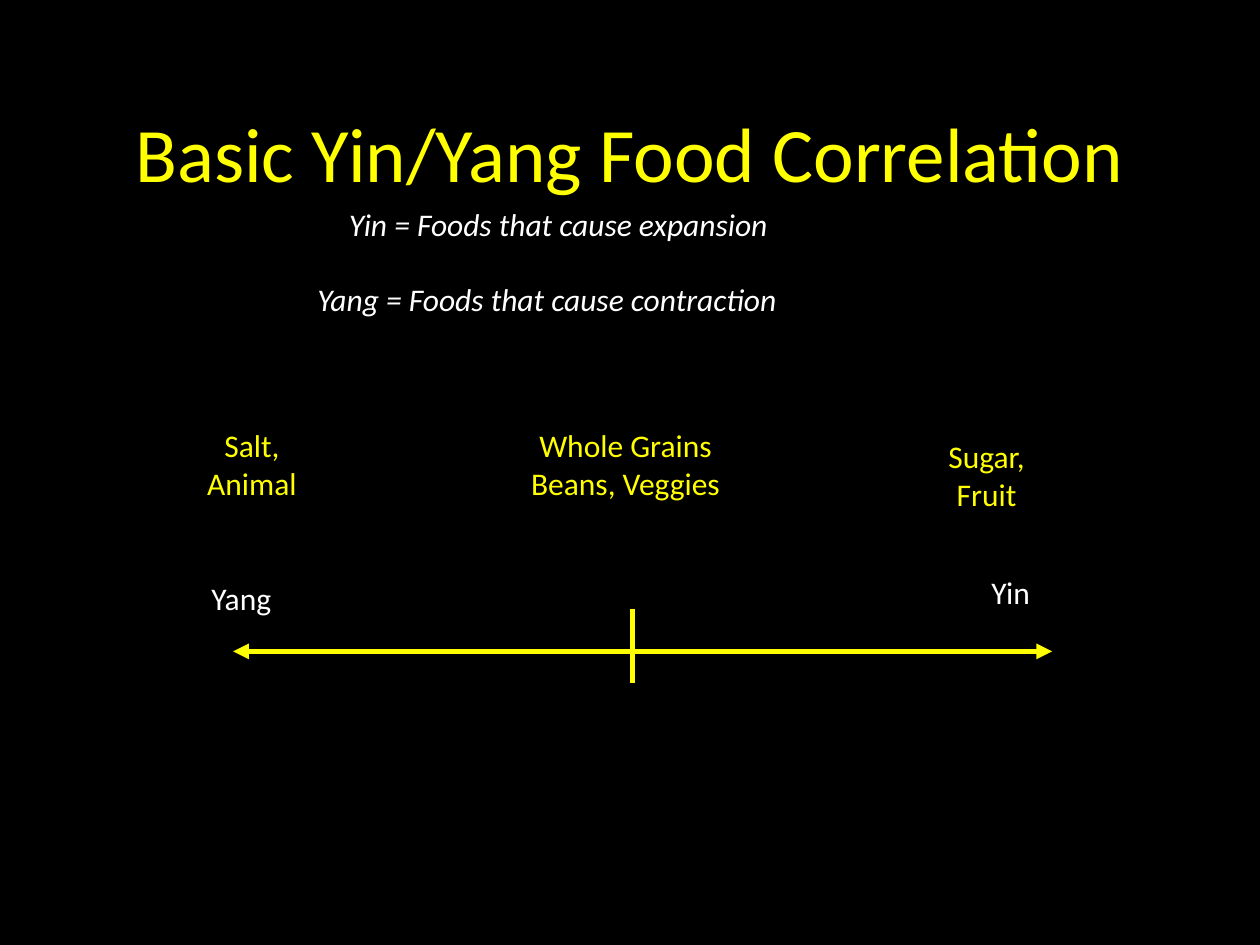
from pptx import Presentation
from pptx.dml.color import RGBColor
from pptx.enum.shapes import MSO_CONNECTOR
from pptx.enum.text import MSO_ANCHOR, PP_ALIGN
from pptx.oxml.ns import qn
from pptx.util import Inches, Pt
from lxml import etree

BLACK = RGBColor(0x00, 0x00, 0x00)
YELLOW = RGBColor(0xFF, 0xFF, 0x00)
WHITE = RGBColor(0xFF, 0xFF, 0xFF)
LEFT, CENTER = PP_ALIGN.LEFT, PP_ALIGN.CENTER
TOP, MIDDLE = MSO_ANCHOR.TOP, MSO_ANCHOR.MIDDLE
STRAIGHT = MSO_CONNECTOR.STRAIGHT
FONT = "Calibri"

# Content: text, (left, top, width, height)
TITLE = ("Basic Yin/Yang Food Correlation", (0.75, 0.58, 8.5, 1.25))
DEFINITIONS = [
    ("Yin = Foods that cause expansion", (2.67, 1.58, 4.75, 0.5)),
    ("Yang = Foods that cause contraction", (2.42, 2.17, 5.17, 0.5)),
]
FOODS = [
    ("Salt, Animal", (1.35, 3.33, 1.3, 0.9)),
    ("Whole Grains\nBeans, Veggies", (3.83, 3.33, 2.27, 0.9)),
    ("Sugar, Fruit", (7.18, 3.42, 1.3, 0.9)),
]
POLES = [
    ("Yang", (1.58, 4.55, 0.92, 0.5)),
    ("Yin", (7.77, 4.5, 0.7, 0.5)),
]
# Lines: start, end, arrowheads at both ends
AXIS = ((1.85, 5.17), (8.35, 5.17), True)
MIDPOINT = ((5.02, 4.83), (5.02, 5.42), False)


def add_text(s, text, box, color, size=18, align=LEFT, italic=False, anchor=TOP):
    tf = s.shapes.add_textbox(*map(Inches, box)).text_frame
    tf.word_wrap = True
    tf.vertical_anchor = anchor
    tf.text = text
    for p in tf.paragraphs:
        p.alignment = align
        for r in p.runs:
            r.font.name = FONT
            r.font.size = Pt(size)
            r.font.italic = italic
            r.font.color.rgb = color


def add_line(s, start, end, arrows):
    line = s.shapes.add_connector(STRAIGHT, *map(Inches, start + end))
    line.line.color.rgb = YELLOW
    line.line.width = Pt(3)
    if arrows:
        ln = line.line._get_or_add_ln()
        for tag in ("a:headEnd", "a:tailEnd"):
            etree.SubElement(ln, qn(tag), type="triangle")
    etree.SubElement(line._element.spPr, qn("a:effectLst"))


def main():
    prs = Presentation()
    prs.slide_width, prs.slide_height = Inches(10), Inches(7.5)
    s = prs.slides.add_slide(prs.slide_layouts[6])
    s.background.fill.solid()
    s.background.fill.fore_color.rgb = BLACK

    # Title and definitions
    add_text(s, *TITLE, YELLOW, size=44, align=CENTER, anchor=MIDDLE)
    for text, box in DEFINITIONS:
        add_text(s, text, box, WHITE, italic=True)

    # Foods above the scale
    for text, box in FOODS:
        add_text(s, text, box, YELLOW, align=CENTER)

    # Scale from yang to yin
    for text, box in POLES:
        add_text(s, text, box, WHITE)
    for line in (AXIS, MIDPOINT):
        add_line(s, *line)

    prs.save("out.pptx")


if __name__ == "__main__":
    main()
